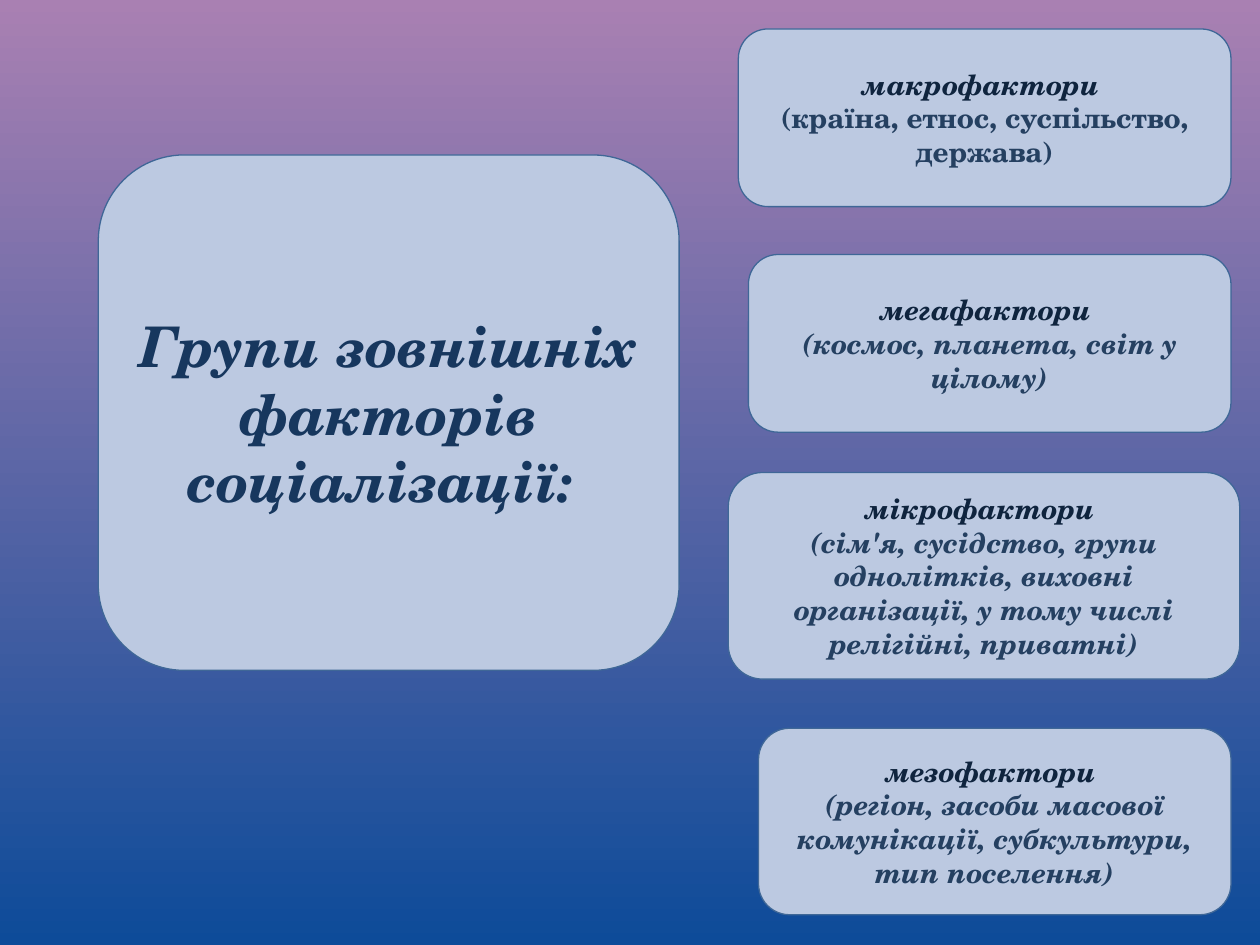
"""Build a slide on the groups of external socialization factors."""
from pptx import Presentation
from pptx import util as u
from pptx.dml.color import RGBColor
from pptx.enum import shapes, text

FONT = "TeX Gyre Schola"
GRADIENT = ("A980B2", "0D4B99")
CARD_FILL, CARD_LINE = "BCC9E1", "3F6797"
TITLE_COLOR, HEADING_COLOR, DETAIL_COLOR = "17375E", "0F243E", "254061"

TITLE = "Групи зовнішніх факторів соціалізації: "
TITLE_PLACE = (0.78, 1.23, 4.61, 4.09)
FACTORS = [
    ("макрофактори ", "(країна, етнос, суспільство, держава)", False,
     (5.86, 0.23, 3.91, 1.41)),
    ("мегафактори ", "(космос, планета, світ у цілому)", True,
     (5.94, 2.02, 3.83, 1.41)),
    ("мікрофактори ", "(сім'я, сусідство, групи однолітків, виховні "
     "організації, у тому числі релігійні, приватні)", True,
     (5.78, 3.75, 4.06, 1.64)),
    ("мезофактори ", "(регіон, засоби масової комунікації, субкультури, "
     "тип поселення)", True,
     (6.02, 5.78, 3.75, 1.48)),
]


def color(value):
    return RGBColor.from_string(value)


def write(paragraph, words, size=16, ink=DETAIL_COLOR, italic=True):
    paragraph.alignment = text.PP_ALIGN.CENTER
    run = paragraph.add_run()
    run.text = words
    font = run.font
    font.name, font.size = FONT, u.Pt(size)
    font.bold, font.italic = True, italic
    font.color.rgb = color(ink)


def add_card(slide, place):
    card = slide.shapes.add_shape(
        shapes.MSO_SHAPE.ROUNDED_RECTANGLE, *map(u.Inches, place))
    card.shadow.inherit = False
    card.fill.solid()
    card.fill.fore_color.rgb = color(CARD_FILL)
    card.line.color.rgb = color(CARD_LINE)
    card.line.width = u.Pt(0.75)
    frame = card.text_frame
    frame.word_wrap = True
    frame.vertical_anchor = text.MSO_ANCHOR.MIDDLE
    return frame


def main():
    deck = Presentation()
    deck.slide_width, deck.slide_height = u.Inches(10), u.Inches(7.5)
    slide = deck.slides.add_slide(deck.slide_layouts[6])

    backdrop = slide.background.fill
    backdrop.gradient()
    backdrop.gradient_angle = 270
    for stop, shade in zip(backdrop.gradient_stops, GRADIENT):
        stop.color.rgb = color(shade)

    title = add_card(slide, TITLE_PLACE)
    write(title.paragraphs[0], TITLE, size=32, ink=TITLE_COLOR)
    for heading, detail, italic, place in FACTORS:
        factor = add_card(slide, place)
        write(factor.paragraphs[0], heading, ink=HEADING_COLOR)
        write(factor.add_paragraph(), detail, italic=italic)

    deck.save("out.pptx")


if __name__ == "__main__":
    main()
